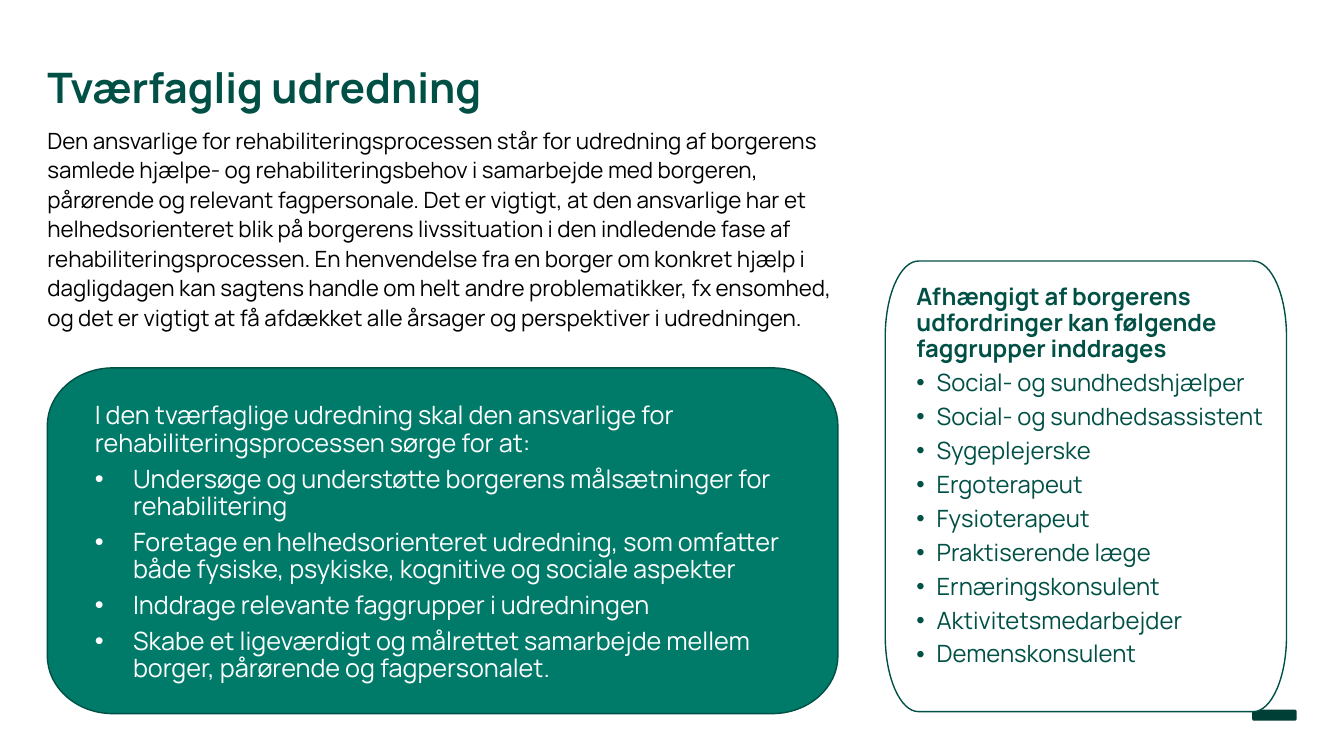
from lxml import etree
from pptx import Presentation, util as u
from pptx.dml.color import RGBColor
from pptx.enum import shapes, text
from pptx.oxml.ns import qn

COLORS = {"dark": "005045", "green": "007B6A", "white": "FFFFFF", "black": "000000",
          "mark": "003F36"}
FONT = "Manrope"
CURVE = 0.55

TITLE = "Tværfaglig udredning"
INTRO = (
    "Den ansvarlige for rehabiliteringsprocessen står for udredning af borgerens "
    "samlede hjælpe- og rehabiliteringsbehov i samarbejde med borgeren, pårørende og "
    "relevant fagpersonale. Det er vigtigt, at den ansvarlige har et helhedsorienteret "
    "blik på borgerens livssituation i den indledende fase af rehabiliteringsprocessen. "
    "En henvendelse fra en borger om konkret hjælp i dagligdagen kan sagtens handle om "
    "helt andre problematikker, fx ensomhed, og det er vigtigt at få afdækket alle "
    "årsager og perspektiver i udredningen."
)
MARK_BOX = (12.42, 7.04, 0.44, 0.11)
PANELS = [
    {
        "box": (0.47, 3.65, 7.84, 3.43), "radii": (0.65, 0.57),
        "insets": (0.47, 0.35, 0.39, 0.39), "fill": "green", "color": "white",
        "size": 18, "after": 6.3, "indent": 0.38, "bold_heading": False,
        "heading": "I den tværfaglige udredning skal den ansvarlige for "
                   "rehabiliteringsprocessen sørge for at:",
        "items": [
            "Undersøge og understøtte borgerens målsætninger for rehabilitering",
            "Foretage en helhedsorienteret udredning, som omfatter både fysiske, "
            "psykiske, kognitive og sociale aspekter",
            "Inddrage relevante faggrupper i udredningen",
            "Skabe et ligeværdigt og målrettet samarbejde mellem borger, pårørende "
            "og fagpersonalet.",
        ],
    },
    {
        "box": (8.78, 2.59, 3.98, 4.47), "radii": (0.33, 0.75),
        "insets": (0.31, 0.24, 0.2, 0.24), "fill": "white", "color": "dark",
        "size": 17, "after": 5.9, "indent": 0.2, "bold_heading": True,
        "heading": "Afhængigt af borgerens udfordringer kan følgende faggrupper inddrages",
        "items": [
            "Social- og sundhedshjælper", "Social- og sundhedsassistent",
            "Sygeplejerske", "Ergoterapeut", "Fysioterapeut", "Praktiserende læge",
            "Ernæringskonsulent", "Aktivitetsmedarbejder", "Demenskonsulent",
        ],
    },
]


def rgb(name):
    return RGBColor.from_string(COLORS[name])


def set_bullet(para, indent):
    props = para._p.get_or_add_pPr()
    props.set("marL", str(u.Inches(indent)))
    props.set("indent", str(-u.Inches(indent)))
    if indent:
        etree.SubElement(props, qn("a:buFont")).set("typeface", "Arial")
        etree.SubElement(props, qn("a:buChar")).set("char", "•")
    else:
        etree.SubElement(props, qn("a:buNone"))


def write(para, words, size, color, spacing, bold=False, after=0, indent=0):
    para.text = words
    para.alignment = text.PP_ALIGN.LEFT
    para.line_spacing = spacing
    para.space_before = u.Pt(0)
    para.space_after = u.Pt(after)
    set_bullet(para, indent)
    font = para.font
    font.name, font.size, font.bold = FONT, u.Pt(size), bold
    font.color.rgb = rgb(color)


def prepare(frame, insets=(0, 0, 0, 0)):
    frame.word_wrap = True
    frame.auto_size = text.MSO_AUTO_SIZE.NONE
    frame.vertical_anchor = text.MSO_ANCHOR.TOP
    (frame.margin_left, frame.margin_top,
     frame.margin_right, frame.margin_bottom) = map(u.Inches, insets)


def fill_placeholder(holder, box, *style):
    holder.left, holder.top, holder.width, holder.height = map(u.Inches, box)
    prepare(holder.text_frame)
    write(holder.text_frame.paragraphs[0], *style)


def corner_ends(box, radii):
    left, top, width, height = map(u.Inches, box)
    rx, ry = map(u.Inches, radii)
    right, bottom = left + width, top + height
    return [(right, bottom - ry), (right - rx, bottom),
            (left + rx, bottom), (left, bottom - ry),
            (left, top + ry), (left + rx, top),
            (right - rx, top), (right, top + ry)]


def curve_corners(shape):
    outline = shape._element.find(".//" + qn("a:path"))
    steps = list(outline)
    for number in range(1, 8, 2):
        x0, y0 = (int(steps[number - 1][0].get(axis)) for axis in "xy")
        x1, y1 = (int(steps[number][0].get(axis)) for axis in "xy")
        corner_x, corner_y = (x0, y1) if number % 4 == 1 else (x1, y0)
        curve = etree.Element(qn("a:cubicBezTo"))
        for x, y in ((x0, y0), (x1, y1)):
            handle = etree.SubElement(curve, qn("a:pt"))
            handle.set("x", str(round(x + CURVE * (corner_x - x))))
            handle.set("y", str(round(y + CURVE * (corner_y - y))))
        curve.append(steps[number][0])
        outline.replace(steps[number], curve)


def paint(shape, color):
    shape.shadow.inherit = False
    shape.fill.solid()
    shape.fill.fore_color.rgb = rgb(color)


def add_panel(page, panel):
    points = corner_ends(panel["box"], panel["radii"])
    builder = page.shapes.build_freeform(*points[0])
    builder.add_line_segments(points[1:], close=True)
    shape = builder.convert_to_shape()
    curve_corners(shape)
    paint(shape, panel["fill"])
    shape.line.color.rgb = rgb("dark")
    shape.line.width = u.Pt(1)
    frame = shape.text_frame
    prepare(frame, panel["insets"])
    style = {"size": panel["size"], "color": panel["color"], "spacing": 0.9,
             "after": panel["after"]}
    write(frame.paragraphs[0], panel["heading"], bold=panel["bold_heading"], **style)
    for item in panel["items"]:
        write(frame.add_paragraph(), item, indent=panel["indent"], **style)


def main():
    deck = Presentation()
    deck.slide_width, deck.slide_height = u.Inches(13.33), u.Inches(7.5)
    page = deck.slides.add_slide(deck.slide_layouts[1])
    fill_placeholder(page.shapes.title, (0.47, 0.69, 9.19, 0.4), TITLE, 30, "dark", 0.83, True)
    fill_placeholder(page.placeholders[1], (0.47, 1.23, 7.84, 2.02), INTRO, 16, "black", 1.1)
    mark = page.shapes.add_shape(shapes.MSO_SHAPE.ROUNDED_RECTANGLE, *map(u.Inches, MARK_BOX))
    paint(mark, "mark")
    mark.line.fill.background()
    for panel in PANELS:
        add_panel(page, panel)
    deck.save("out.pptx")


if __name__ == "__main__":
    main()
